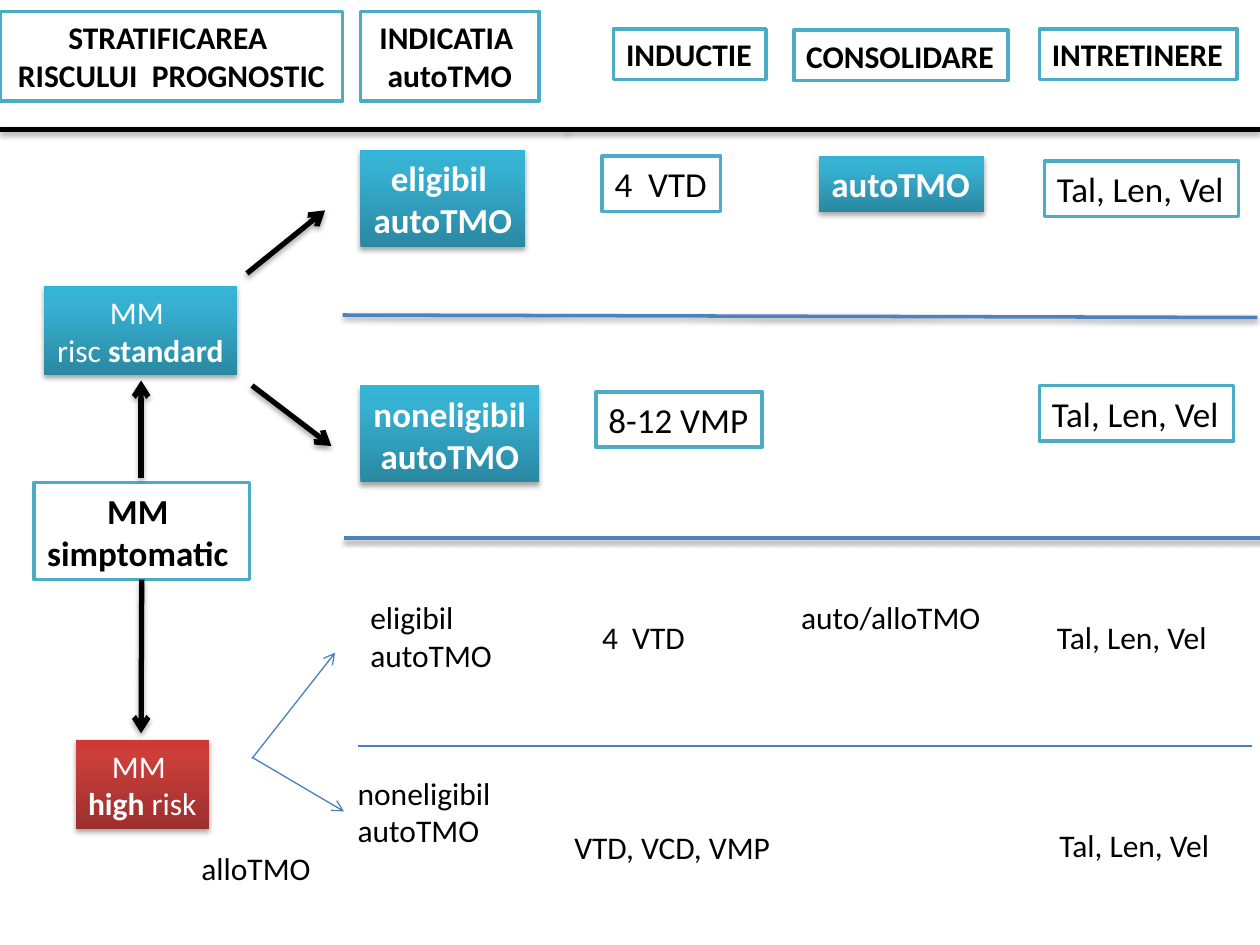
from copy import deepcopy
from dataclasses import dataclass
from typing import Optional

from lxml import etree
from pptx import Presentation
from pptx.dml.color import RGBColor
from pptx.enum.shapes import MSO_CONNECTOR, MSO_SHAPE
from pptx.enum.text import MSO_AUTO_SIZE, PP_ALIGN
from pptx.oxml.ns import qn
from pptx.util import Inches, Pt

RECTANGLE = MSO_SHAPE.RECTANGLE
STRAIGHT = MSO_CONNECTOR.STRAIGHT
FIT_TEXT = MSO_AUTO_SIZE.SHAPE_TO_FIT_TEXT
LEFT, CENTER = PP_ALIGN.LEFT, PP_ALIGN.CENTER
BOTTOM_SIDE = 2

COLORS = {
    "black": "000000",
    "white": "FFFFFF",
    "frame": "4BACC6",
    "divider": "4F81BD",
    "thin": "4B7EBC",
}
GRADIENTS = {
    "teal": ((0, "2A88A2"), (0.8, "37B1D2"), (1, "34B4D6")),
    "red": ((0, "9C2F2D"), (0.8, "CB3E3A"), (1, "CE3B37")),
}


@dataclass
class Box:
    lines: tuple[str, ...]
    left: float
    top: float
    width: float
    height: float
    style: str = "plain"
    size: int = 18
    bold: bool = False
    align: PP_ALIGN = LEFT
    wrap: bool = False


@dataclass
class Line:
    start: tuple[float, float]
    end: tuple[float, float]
    color: str = "black"
    width: float = 3
    arrow: bool = False
    shadow_alpha: Optional[int] = None
    shadow_distance: float = 1.8


SYMPTOMATIC = Box(("MM ", "simptomatic "), 0.27, 3.83, 1.71, 0.77, "framed", 20, True, CENTER)

HEADERS = [
    Box(("STRATIFICAREA ", "RISCULUI  PROGNOSTIC"), 0, 0.09, 2.72, 0.71, "framed", 18, True, CENTER, True),
    Box(("INDICATIA ", "autoTMO"), 2.86, 0.09, 1.42, 0.71, "framed", 18, True, CENTER, True),
    Box(("INDUCTIE",), 4.87, 0.23, 1.21, 0.4, "framed", 18, True),
    Box(("CONSOLIDARE",), 6.3, 0.24, 1.7, 0.4, "framed", 18, True),
    Box(("INTRETINERE",), 8.25, 0.23, 1.57, 0.4, "framed", 18, True),
]
RISK_GROUPS = [
    Box(("MM ", "risc *standard*"), 0.35, 2.27, 1.53, 0.71, "teal", align=CENTER),
    Box(("MM ", "*high* risk"), 0.6, 5.87, 1.06, 0.71, "red", align=CENTER),
    Box(("alloTMO",), 1.5, 6.69, 1.08, 0.4),
]
STANDARD_RISK = [
    Box(("eligibil ", "autoTMO"), 2.86, 1.19, 1.31, 0.77, "teal", 20, True, CENTER),
    Box(("4  VTD",), 4.78, 1.24, 0.94, 0.44, "framed", 20),
    Box(("autoTMO",), 6.5, 1.24, 1.31, 0.44, "teal", 20, True),
    Box(("Tal, Len, Vel",), 8.29, 1.28, 1.54, 0.44, "framed", 20),
    Box(("noneligibil", "autoTMO"), 2.86, 3.06, 1.42, 0.77, "teal", 20, True, CENTER),
    Box(("8-12 VMP",), 4.73, 3.11, 1.32, 0.44, "framed", 20),
    Box(("Tal, Len, Vel",), 8.25, 3.06, 1.54, 0.44, "framed", 20),
]
HIGH_RISK = [
    Box(("eligibil", "autoTMO"), 2.84, 4.7, 1.18, 0.71),
    Box(("4  VTD",), 4.68, 4.86, 0.87, 0.4),
    Box(("auto/alloTMO",), 6.26, 4.7, 1.64, 0.4),
    Box(("Tal, Len, Vel",), 8.29, 4.86, 1.41, 0.4),
    Box(("noneligibil", "autoTMO"), 2.74, 6.09, 1.27, 0.71),
    Box(("VTD, VCD, VMP",), 4.46, 6.52, 1.77, 0.4),
    Box(("Tal, Len, Vel",), 8.31, 6.51, 1.41, 0.4),
]
TO_HIGH_RISK = Line((1.13, 4.6), (1.12, 5.82), arrow=True, shadow_alpha=35)
LINES = [
    Line((4.5, 1.03), (10, 1.03), shadow_alpha=35),
    Line((4.5, 1.03), (0, 1.03), shadow_alpha=35),
    Line((1.12, 3.79), (1.12, 3.02), arrow=True, shadow_alpha=35),
    Line((1.96, 2.17), (2.58, 1.67), arrow=True, shadow_alpha=35),
    Line((2, 3.06), (2.63, 3.54), arrow=True, shadow_alpha=35),
    Line((2.72, 2.5), (9.98, 2.52), "divider", 2, shadow_alpha=38, shadow_distance=1.6),
    Line((2.73, 4.27), (10.05, 4.27), "divider", 2, shadow_alpha=38, shadow_distance=1.6),
    Line((2, 6.02), (2.66, 5.18), "thin", 0.75, arrow=True),
    Line((2, 6.01), (2.73, 6.44), "thin", 0.75, arrow=True),
    Line((2.84, 5.92), (9.94, 5.92), "thin", 0.75),
]


def rgb(name: str) -> RGBColor:
    return RGBColor.from_string(COLORS[name])


def add_shadow(effects, alpha: int, distance: float) -> None:
    shadow = etree.SubElement(
        effects, qn("a:outerShdw"), blurRad=str(Pt(3.1)), dist=str(Pt(distance)),
        dir="5400000", rotWithShape="0")
    color = etree.SubElement(shadow, qn("a:srgbClr"), val=COLORS["black"])
    etree.SubElement(color, qn("a:alpha"), val=str(alpha * 1000))


def fill_gradient(shape, stops) -> None:
    shape.fill.gradient()
    shape.fill.gradient_angle = 90
    stop_list = shape._element.spPr.find(".//" + qn("a:gsLst"))
    stop_list.insert(1, deepcopy(stop_list[0]))
    for stop, (position, color) in zip(shape.fill.gradient_stops, stops):
        stop.position = position
        stop.color.rgb = RGBColor.from_string(color)


def write_text(frame, box: Box) -> None:
    for name, value in {"word_wrap": box.wrap, "auto_size": FIT_TEXT}.items():
        setattr(frame, name, value)
    text_color = "white" if box.style in GRADIENTS else "black"
    for index, line in enumerate(box.lines):
        paragraph = frame.paragraphs[0] if index == 0 else frame.add_paragraph()
        paragraph.alignment = box.align
        for part, words in enumerate(line.split("*")):
            if not words:
                continue
            run = paragraph.add_run()
            run.text = words
            font_format = {"name": "Calibri", "size": Pt(box.size), "bold": box.bold or part % 2 == 1}
            for name, value in font_format.items():
                setattr(run.font, name, value)
            run.font.color.rgb = rgb(text_color)


def add_box(slide, box: Box):
    place = [Inches(v) for v in (box.left, box.top, box.width, box.height)]
    if box.style == "plain":
        shape = slide.shapes.add_textbox(*place)
    else:
        shape = slide.shapes.add_shape(RECTANGLE, *place)
        shape.shadow.inherit = False
        if box.style in GRADIENTS:
            fill_gradient(shape, GRADIENTS[box.style])
            shape.line.fill.background()
            add_shadow(shape._element.spPr.find(qn("a:effectLst")), 35, 1.8)
        else:
            shape.fill.solid()
            shape.fill.fore_color.rgb = rgb("white")
            shape.line.color.rgb = rgb("frame")
            shape.line.width = Pt(2)
    write_text(shape.text_frame, box)
    return shape


def add_line(slide, line: Line):
    connector = slide.shapes.add_connector(STRAIGHT, *[Inches(v) for v in line.start + line.end])
    connector.line.color.rgb = rgb(line.color)
    connector.line.width = Pt(line.width)
    properties = connector._element.spPr
    if line.arrow:
        etree.SubElement(properties.find(qn("a:ln")), qn("a:tailEnd"), type="arrow")
    effects = etree.SubElement(properties, qn("a:effectLst"))
    if line.shadow_alpha is not None:
        add_shadow(effects, line.shadow_alpha, line.shadow_distance)
    return connector


def main() -> None:
    deck = Presentation()
    deck.slide_width, deck.slide_height = Inches(10), Inches(7.5)
    slide = deck.slides.add_slide(deck.slide_layouts[6])
    symptomatic = add_box(slide, SYMPTOMATIC)
    for box in HEADERS + RISK_GROUPS + STANDARD_RISK + HIGH_RISK:
        add_box(slide, box)
    for line in LINES:
        add_line(slide, line)
    add_line(slide, TO_HIGH_RISK).begin_connect(symptomatic, BOTTOM_SIDE)
    deck.save("out.pptx")


if __name__ == "__main__":
    main()
